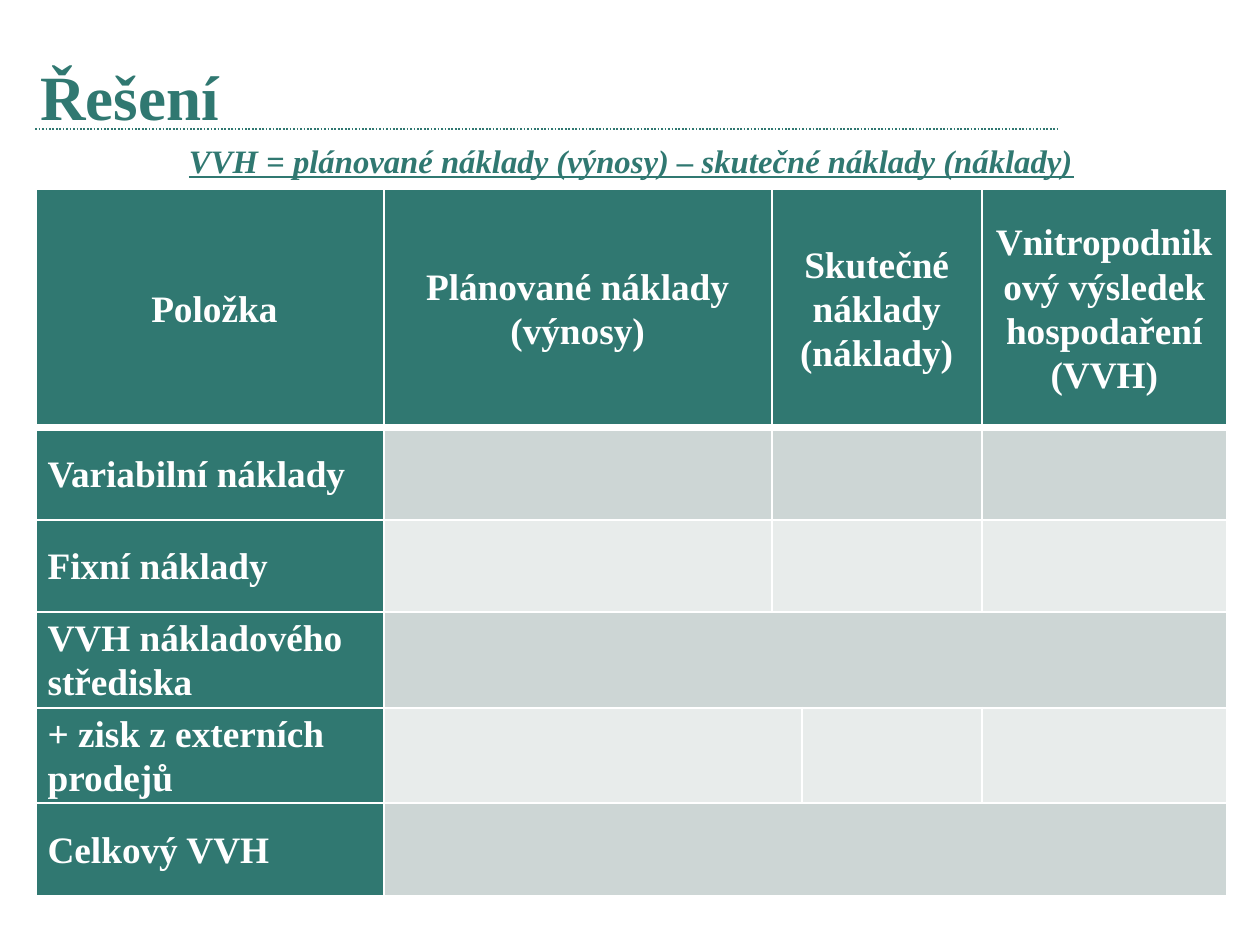
from dataclasses import dataclass

import pptx
import pptx.dml.color
import pptx.enum.dml
import pptx.enum.shapes
import pptx.enum.text
import pptx.oxml
import pptx.util
from lxml import etree
from pptx.oxml.ns import qn

Pt = pptx.util.Pt
RGB = pptx.dml.color.RGBColor
ALIGN = pptx.enum.text.PP_ALIGN
ANCHOR = pptx.enum.text.MSO_ANCHOR
WIDTH, HEIGHT = Pt(540), Pt(405)


@dataclass(frozen=True)
class Theme:
    font: str = "Times New Roman"
    accent: str = "307871"
    white: str = "FFFFFF"
    bands: tuple[str, str] = ("CDD6D5", "E8ECEB")
    title_size: float = 27
    formula_size: float = 14
    table_size: float = 16
    thin: float = 1
    thick: float = 3


@dataclass(frozen=True)
class Row:
    """Texts start the row's cells; spans count the grid columns of each cell."""
    height: float
    spans: tuple[int, ...]
    texts: tuple[str, ...]


THEME = Theme()
LEFT, TABLE_TOP = 2.85, 20.04
COLUMNS = (27.6, 30.8, 2.4, 14.27, 19.46)
TABLE_WIDTH = sum(COLUMNS)
SPLIT, WHOLE = (1, 1, 2, 1), (1, 4)
ROWS = (
    Row(25.2, SPLIT, (" Položka", "Plánované náklady (výnosy)", "Skutečné náklady (náklady)",
                      "Vnitropodnikový výsledek hospodaření (VVH)")),
    Row(9.75, SPLIT, ("Variabilní náklady",)),
    Row(9.75, SPLIT, ("Fixní náklady",)),
    Row(10.13, WHOLE, ("VVH nákladového střediska",)),
    Row(10.13, (1, 2, 1, 1), ("+ zisk z externích prodejů",)),
    Row(9.75, WHOLE, ("Celkový VVH",)),
)


def across(percent: float) -> int:
    return round(WIDTH * percent / 100)


def down(percent: float) -> int:
    return round(HEIGHT * percent / 100)


def write(tf, text: str, size: float, color: str, align=ALIGN.LEFT):
    """Fill a text frame with one bold paragraph and return it."""
    tf.word_wrap = True
    p = tf.paragraphs[0]
    p.text = text
    p.alignment = align
    p.font.name, p.font.size, p.font.bold = THEME.font, Pt(size), True
    p.font.color.rgb = RGB.from_string(color)
    return p


def add_title(s) -> None:
    sp = s.shapes.title
    sp.left, sp.top, sp.width, sp.height = across(1.87), down(4.8), across(88.13), down(10.49)
    sp.text_frame.auto_size = pptx.enum.text.MSO_AUTO_SIZE.NONE
    sp.text_frame.vertical_anchor = ANCHOR.MIDDLE
    write(sp.text_frame, "Řešení", THEME.title_size, THEME.accent)


def add_title_rule(s) -> None:
    y = down(13.65)
    rule = s.shapes.add_connector(pptx.enum.shapes.MSO_CONNECTOR.STRAIGHT,
                                  across(2.8), y, across(83.87), y)
    rule.line.color.rgb = RGB.from_string(THEME.accent)
    rule.line.width = Pt(0.75)
    rule.line.dash_style = pptx.enum.dml.MSO_LINE.ROUND_DOT
    etree.SubElement(rule._element.spPr, qn("a:effectLst"))


def add_formula(s) -> None:
    sp = s.shapes.add_textbox(across(LEFT), down(14.04), across(TABLE_WIDTH), down(6.04))
    p = write(sp.text_frame, "VVH = plánované náklady (výnosy) – skutečné náklady (náklady)",
              THEME.formula_size, THEME.accent, ALIGN.CENTER)
    p.font.italic = p.font.underline = True


def set_borders(cell, top: float, bottom: float) -> None:
    tc_pr = cell._tc.get_or_add_tcPr()
    sides = {"L": THEME.thin, "R": THEME.thin, "T": top, "B": bottom}
    for side, width in sides.items():
        ln = etree.SubElement(tc_pr, qn(f"a:ln{side}"), w=str(Pt(width)))
        fill = etree.SubElement(ln, qn("a:solidFill"))
        etree.SubElement(fill, qn("a:srgbClr"), val=THEME.white)


def format_cell(cell, row: int, column: int) -> None:
    set_borders(cell, THEME.thick if row == 1 else THEME.thin,
                THEME.thick if row == 0 else THEME.thin)
    is_header = row == 0 or column == 0
    color = THEME.accent if is_header else THEME.bands[(row - 1) % 2]
    cell.fill.solid()
    cell.fill.fore_color.rgb = RGB.from_string(color)


def write_cell(cell, text: str, align) -> None:
    cell.margin_left = cell.margin_right = pptx.util.Inches(0.07)
    cell.margin_top = cell.margin_bottom = 0
    cell.vertical_anchor = ANCHOR.MIDDLE
    p = write(cell.text_frame, text, THEME.table_size, THEME.white, align)
    p.line_spacing = 1.07


def add_results_table(s) -> None:
    table = s.shapes.add_table(len(ROWS), len(COLUMNS), across(LEFT), down(TABLE_TOP),
                               across(TABLE_WIDTH), down(sum(r.height for r in ROWS))).table
    for column, width in zip(table.columns, COLUMNS):
        column.width = across(width)
    for i, row in enumerate(ROWS):
        table.rows[i].height = down(row.height)
        for j in range(len(COLUMNS)):
            format_cell(table.cell(i, j), i, j)
        start = 0
        for k, span in enumerate(row.spans):
            cell = table.cell(i, start)
            if span > 1:
                cell.merge(table.cell(i, start + span - 1))
            if k < len(row.texts):
                write_cell(cell, row.texts[k], ALIGN.CENTER if i == 0 else ALIGN.LEFT)
            start += span


def main() -> None:
    prs = pptx.Presentation()
    prs.slide_width, prs.slide_height = WIDTH, HEIGHT
    s = prs.slides.add_slide(prs.slide_layouts[5])
    add_title_rule(s)
    add_title(s)
    add_formula(s)
    add_results_table(s)
    prs.save("out.pptx")


if __name__ == "__main__":
    main()
